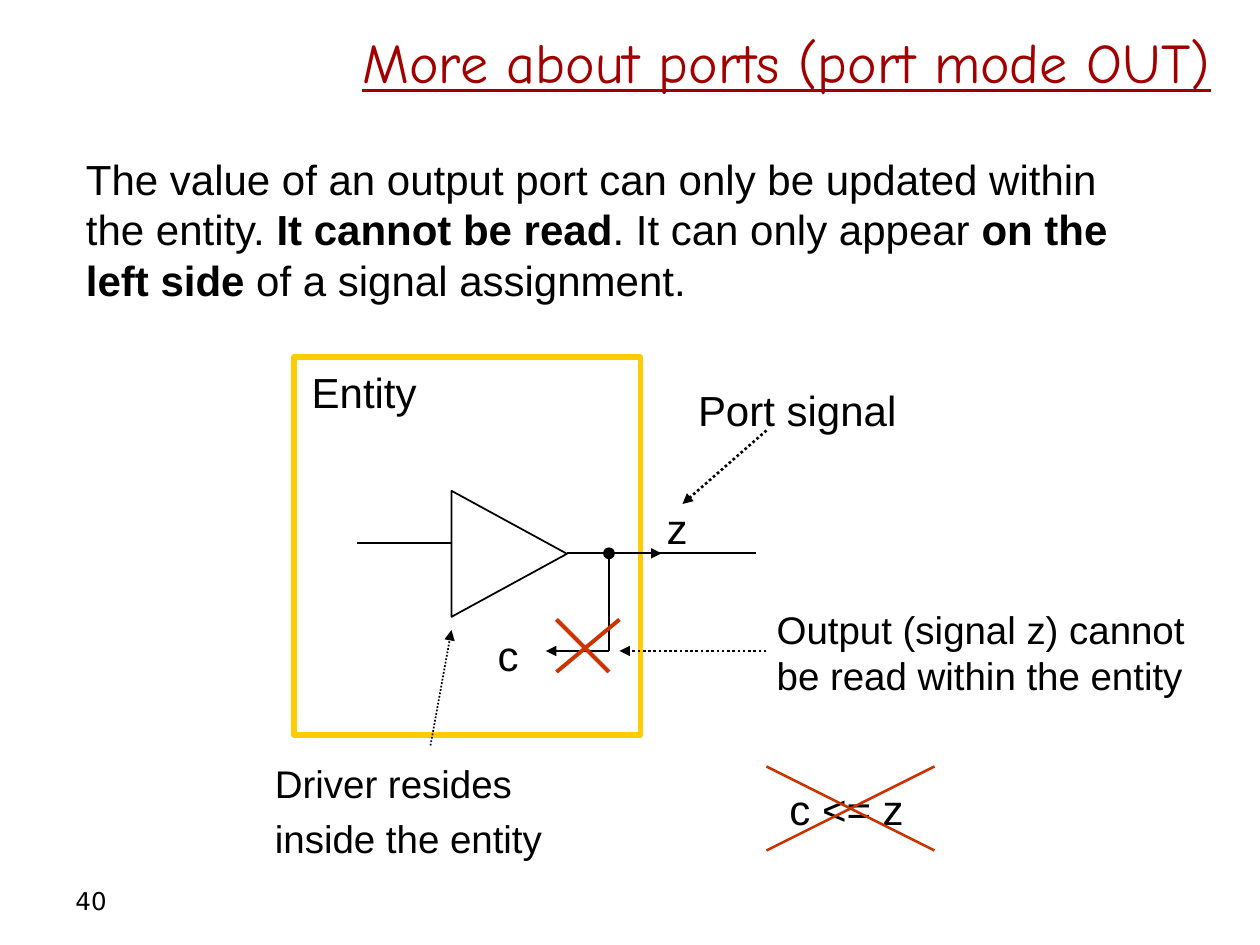
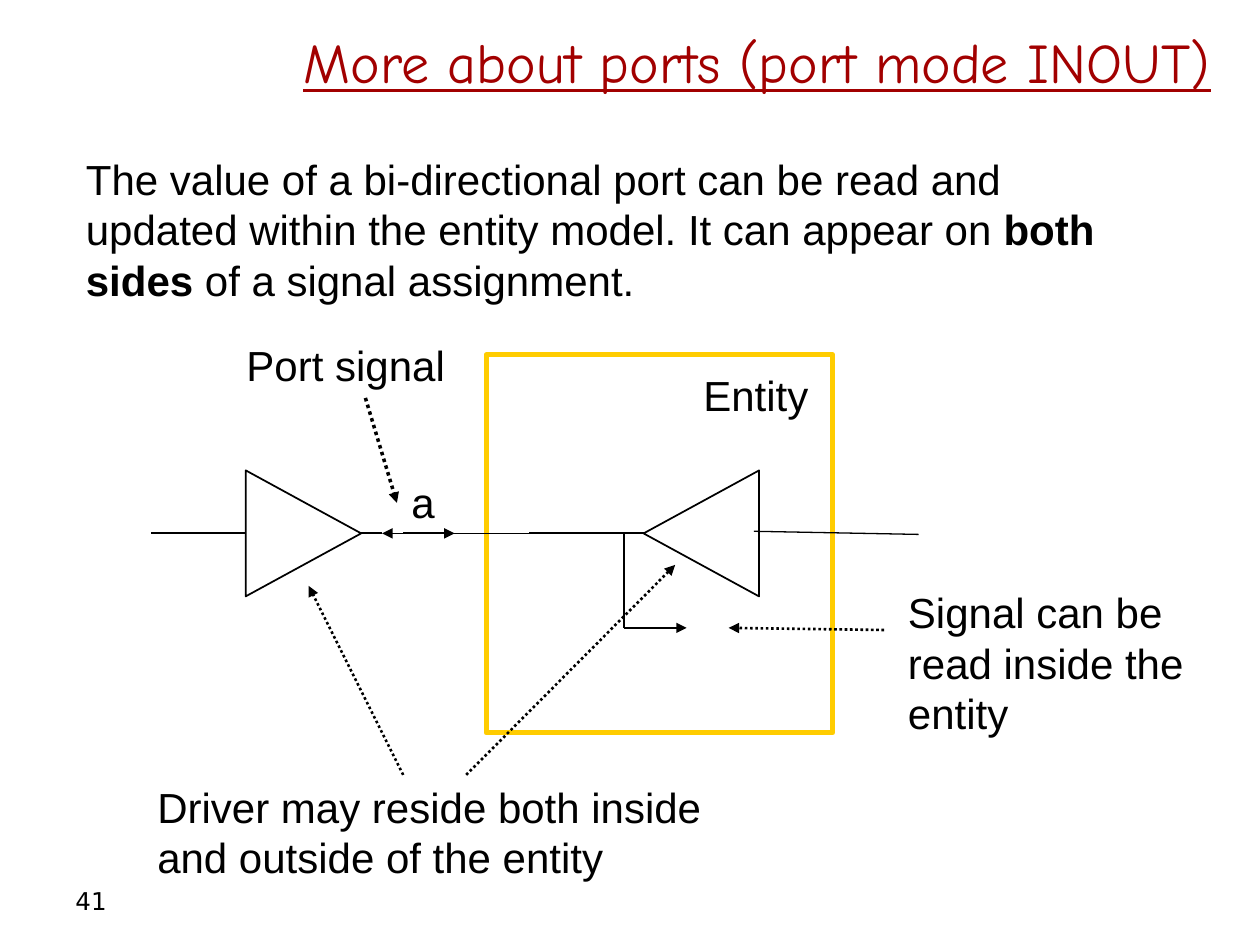
"""Build two slides on the port modes OUT and INOUT."""
from dataclasses import dataclass

from lxml import etree
from pptx import Presentation
from pptx.dml.color import RGBColor
from pptx.enum.dml import MSO_LINE
from pptx.enum.shapes import MSO_CONNECTOR, MSO_SHAPE
from pptx.enum.text import MSO_ANCHOR, MSO_AUTO_SIZE, PP_ALIGN
from pptx.oxml.ns import qn
from pptx.util import Inches, Pt

DOTS = MSO_LINE.ROUND_DOT
STRAIGHT = MSO_CONNECTOR.STRAIGHT
RECT, OVAL = MSO_SHAPE.RECTANGLE, MSO_SHAPE.OVAL
GATE = MSO_SHAPE.FLOWCHART_EXTRACT
MIDDLE, TOP = MSO_ANCHOR.MIDDLE, MSO_ANCHOR.TOP
FIXED, GROW = MSO_AUTO_SIZE.NONE, MSO_AUTO_SIZE.SHAPE_TO_FIT_TEXT
LEFT, RIGHT = PP_ALIGN.LEFT, PP_ALIGN.RIGHT


@dataclass(frozen=True)
class Theme:
    """Colours, fonts and sizes."""
    ink: str = "000000"
    title: str = "A20000"
    frame: str = "FFCC00"
    cross: str = "CC3300"
    text: int = 24
    note: int = 22
    gap: int = 5


THEME = Theme()
WIDE, HIGH = 10, 7.5
COLS = 120
TITLE_BOX = (4, 1.6, 112.5, 8.4)
BODY_BOX = (7, 14, 104, 15.7)
PAGE_BOX = (6, 83.4, 28, 4.8)
GATE_SIZE = (12, 11)

FONTS = {
    "title": {"name": "Comic Neue", "size": Pt(32), "underline": True},
    "page": {"name": "DejaVu Sans", "size": Pt(14)},
    "text": {"name": "Arial", "size": Pt(THEME.text)},
    "note": {"name": "Arial", "size": Pt(THEME.note)},
}

# colour, width, dotted, arrowhead
LINES = {
    "wire": (THEME.ink, 1, False, False),
    "thin": (THEME.ink, 0.75, False, False),
    "arrow": (THEME.ink, 1, False, True),
    "fine": (THEME.ink, 0.75, False, True),
    "faint": (THEME.ink, 1, True, True),
    "hint": (THEME.ink, 1.5, True, True),
    "bold": (THEME.ink, 2, True, True),
    "strike": (THEME.cross, 1.5, False, False),
    "cross": (THEME.cross, 2.25, False, False),
}

SLIDES = [
    {
        "page": "40",
        "title": "More about ports (port mode OUT)",
        "body": "The value of an output port can only be updated within the "
                "entity. **It cannot be read**. It can only appear **on the "
                "left side** of a signal assignment.",
        "frame": (28, 34, 33, 36),
        "gates": [(48.5, 52.75, 90)],
        "dots": [(57.5, 52.2, 1, 1)],
        "lines": [
            ("faint", (41, 71), (43, 60)),
            ("hint", (73, 41), (65, 48)),
            ("hint", (73, 62), (59, 62)),
            ("wire", (34, 51.7), (43, 51.7)),
            ("arrow", (54, 52.7), (63, 52.7)),
            ("wire", (62, 52.7), (72, 52.7)),
            ("wire", (58, 53), (58, 62)),
            ("arrow", (58, 62), (52, 62)),
        ],
        "marks": [
            ("strike", (73, 73), (89, 81)),
            ("strike", (89, 73), (73, 81)),
            ("cross", (59, 59), (53, 64)),
            ("cross", (53, 59), (58, 64)),
        ],
        "notes": [
            ("text", (28.5, 34.3, 12.4, 6), False, ["Entity"]),
            ("text", (65.3, 36, 21.4, 6), False, ["Port signal"]),
            ("note", (25, 71.8, 28.2, 10.9), False,
             ["Driver resides", "inside the entity"]),
            ("text", (62.3, 47.3, 4.4, 6), False, ["z"]),
            ("text", (74, 74, 13.3, 6), False, ["c <= z"]),
            ("text", (46.2, 59.4, 4.4, 6), False, ["c"]),
            ("note", (72.8, 57.1, 44.2, 10.1), True,
             ["Output (signal z) cannot be read within the entity"]),
        ],
    },
    {
        "page": "41",
        "title": "More about ports (port mode INOUT)",
        "body": "The value of a bi-directional port can be read and updated "
                "within the entity model. It can appear on **both sides** of "
                "a signal assignment.",
        "frame": (46.3, 33.8, 33, 36),
        "gates": [(28.9, 50.8, 90), (66.8, 50.8, 270)],
        "dots": [],
        "lines": [
            ("bold", (34.8, 37.9), (37.8, 47.9)),
            ("wire", (50.4, 50.8), (61.3, 50.8)),
            ("wire", (59.4, 50.8), (59.4, 59.8)),
            ("arrow", (59.4, 59.8), (65.4, 59.8)),
            ("hint", (84.2, 60), (69.4, 59.8)),
            ("arrow", (38.4, 50.8), (43.3, 50.8)),
            ("fine", (50.4, 50.8), (36.4, 50.8)),
            ("wire", (34.3, 50.8), (36.4, 50.8)),
            ("hint", (38.4, 73.8), (29.4, 55.8)),
            ("hint", (44.4, 73.8), (64.3, 53.8)),
            ("wire", (14.4, 50.8), (23.4, 50.8)),
            ("thin", (87.5, 50.9), (71.8, 50.6)),
        ],
        "marks": [],
        "notes": [
            ("text", (85.3, 55.3, 32.9, 15.6), True,
             ["Signal can be\vread inside the entity"]),
            ("text", (65.8, 34.6, 12.4, 6), True, ["Entity"]),
            ("text", (22.3, 31.7, 21.4, 6), False, ["Port signal"]),
            ("text", (13.8, 73.8, 60.1, 10.8), True,
             ["Driver may reside both inside and outside of the entity"]),
            ("text", (38, 44.8, 4.7, 6), False, ["a"]),
        ],
    },
]


def cells(*counts):
    """Turn grid cells into lengths."""
    return [Inches(n * WIDE / COLS) for n in counts]


def assign(thing, values):
    """Set each named value on an object."""
    for name, value in values.items():
        setattr(thing, name, value)


def write(frame, paras, style, color=THEME.ink, align=LEFT, **format):
    """Fill a text frame; double stars switch bold."""
    assign(frame, {"word_wrap": True, "vertical_anchor": TOP,
                   "auto_size": GROW, **format})
    for i, text in enumerate(paras):
        para = frame.add_paragraph() if i else frame.paragraphs[0]
        para.alignment = align
        if i:
            para.space_before = Pt(THEME.gap)
        for j, line in enumerate(text.split("\v")):
            if j:
                para.add_line_break()
            for k, part in enumerate(line.split("**")):
                run = para.add_run()
                run.text = part
                assign(run.font, {**FONTS[style], "bold": k % 2 == 1})
                run.font.color.rgb = RGBColor.from_string(color)


def label(slide, box, paras, style, **format):
    """Add a text box."""
    write(slide.shapes.add_textbox(*cells(*box)).text_frame,
          paras, style, **format)


def shape(slide, kind, box, color, width, fill=None, turn=0):
    """Add an outlined shape."""
    item = slide.shapes.add_shape(kind, *cells(*box))
    item.shadow.inherit = False
    item.rotation = turn
    item.line.color.rgb = RGBColor.from_string(color)
    item.line.width = Pt(width)
    if fill:
        item.fill.solid()
        item.fill.fore_color.rgb = RGBColor.from_string(fill)
    else:
        item.fill.background()


def gate(slide, x, y, turn):
    """Add a driver triangle around its centre."""
    w, h = GATE_SIZE
    shape(slide, GATE, (x - w / 2, y - h / 2, w, h), THEME.ink, 1, turn=turn)


def wire(slide, kind, start, end):
    """Add a line of a named kind."""
    color, width, dotted, head = LINES[kind]
    item = slide.shapes.add_connector(STRAIGHT, *cells(*start, *end))
    item.line.color.rgb = RGBColor.from_string(color)
    item.line.width = Pt(width)
    if dotted:
        item.line.dash_style = DOTS
    if head:
        etree.SubElement(item.get_or_add_ln(), qn("a:tailEnd"),
                         type="triangle")
    etree.SubElement(item.element.spPr, qn("a:effectLst"))


def build(deck, data):
    """Add one slide from its content."""
    slide = deck.slides.add_slide(deck.slide_layouts[5])
    title = slide.shapes.title
    assign(title, dict(zip(("left", "top", "width", "height"),
                           cells(*TITLE_BOX))))
    write(title.text_frame, [data["title"]], "title", THEME.title, RIGHT,
          vertical_anchor=MIDDLE, auto_size=FIXED)
    label(slide, PAGE_BOX, [data["page"]], "page",
          vertical_anchor=MIDDLE, auto_size=FIXED)
    label(slide, BODY_BOX, [data["body"]], "text")
    shape(slide, RECT, data["frame"], THEME.frame, 3)
    for item in data["gates"]:
        gate(slide, *item)
    for item in data["lines"]:
        wire(slide, *item)
    for box in data["dots"]:
        shape(slide, OVAL, box, THEME.ink, 0.75, THEME.ink)
    for style, box, wrap, paras in data["notes"]:
        label(slide, box, paras, style, word_wrap=wrap)
    for item in data["marks"]:
        wire(slide, *item)


def main():
    """Build and save the deck."""
    deck = Presentation()
    deck.slide_width, deck.slide_height = Inches(WIDE), Inches(HIGH)
    for data in SLIDES:
        build(deck, data)
    deck.save("out.pptx")


if __name__ == "__main__":
    main()
